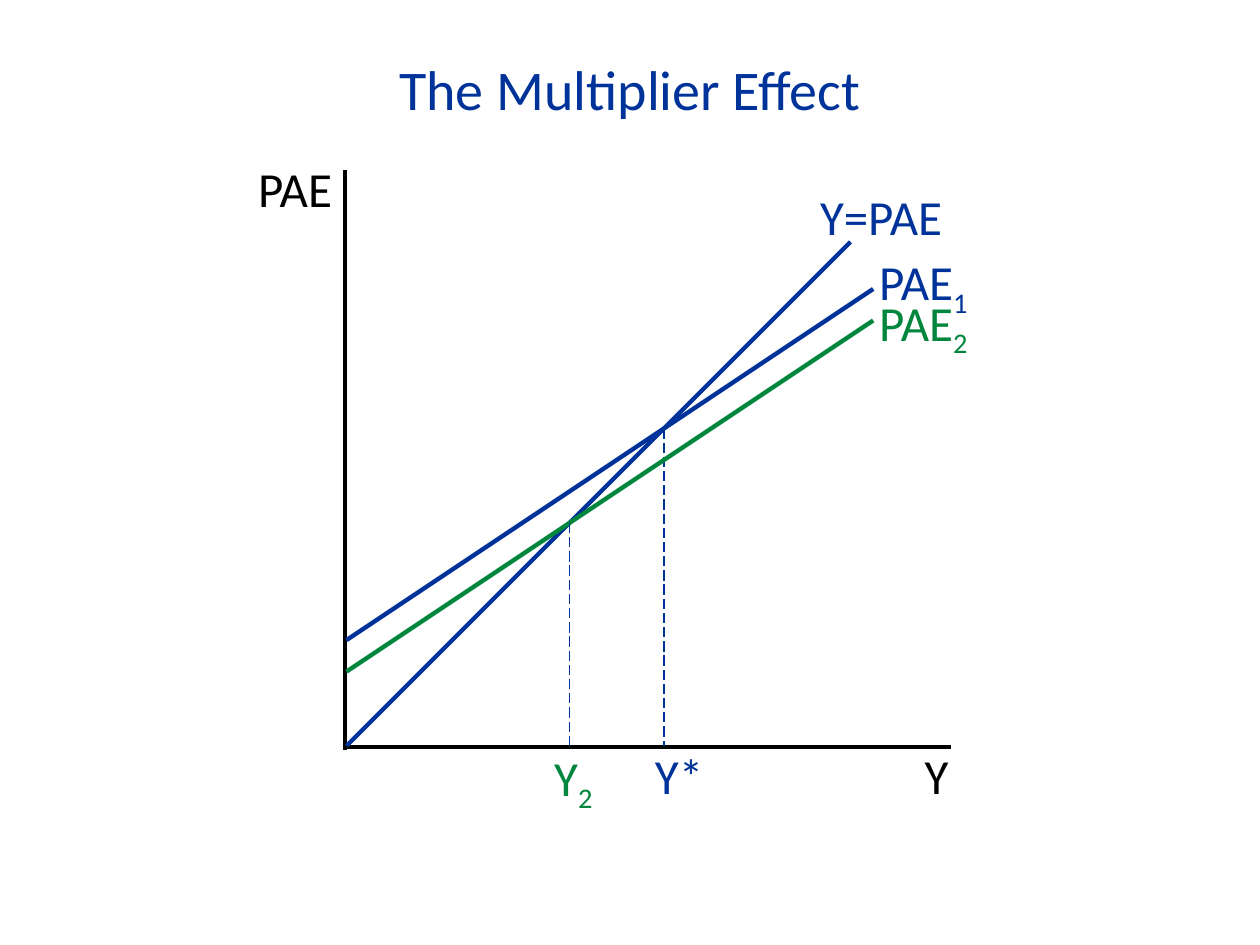
from dataclasses import dataclass

from lxml import etree
from pptx import Presentation
from pptx.dml.color import RGBColor
from pptx.enum.dml import MSO_LINE
from pptx.enum.shapes import MSO_CONNECTOR
from pptx.enum.text import MSO_ANCHOR, PP_ALIGN
from pptx.oxml.ns import qn
from pptx.util import Inches, Pt

STRAIGHT = MSO_CONNECTOR.STRAIGHT
LONG_DASH = MSO_LINE.LONG_DASH
MIDDLE = MSO_ANCHOR.MIDDLE
CENTER = PP_ALIGN.CENTER

BLUE, GREEN, BLACK = "003399", "00863D", "000000"
FONT = "Calibri"
COLUMNS, ROWS = 10, 7.5
CELL = Inches(1)

# Diagram model, in grid cells from the origin
ORIGIN_X, ORIGIN_Y = 2.75, 5.92
SLOPE = 2 / 3
INCOME_END = 4.18
IDENTITY_END = 4


@dataclass
class Expenditure:
    intercept: float
    color: str

    def at(self, income: float) -> float:
        return self.intercept + SLOPE * income

    @property
    def equilibrium(self) -> float:
        return self.intercept / (1 - SLOPE)


@dataclass
class Label:
    text: str
    left: float
    top: float
    width: float
    color: str
    subscript: str = ""
    height: float = 0.57
    spacing: float = 1.0


LABELS = [
    Label("Y", 7.24, 5.87, 0.49, BLACK),
    Label("PAE", 1.95, 1.3, 0.82, BLACK, height=0.49, spacing=0.8),
    Label("Y=PAE", 6.41, 1.43, 1.25, BLUE),
    Label("PAE", 6.88, 1.95, 0.96, BLUE, "1"),
    Label("PAE", 6.88, 2.27, 0.96, GREEN, "2"),
    Label("Y*", 5.1, 5.87, 0.66, BLUE),
    Label("Y", 4.3, 5.88, 0.66, GREEN, "2"),
]


def cells(count: float) -> int:
    return round(count * CELL)


def rgb(color: str) -> RGBColor:
    return RGBColor.from_string(color)


def format_run(run, size: float, color: str) -> None:
    run.font.name = FONT
    run.font.size = Pt(size)
    run.font.color.rgb = rgb(color)


def draw_line(slide, start: tuple[float, float], end: tuple[float, float],
              color: str, width: float = 2.5, dash=None) -> None:
    """Join two (income, expenditure) points."""
    (x1, y1), (x2, y2) = start, end
    line = slide.shapes.add_connector(
        STRAIGHT, cells(ORIGIN_X + x1), cells(ORIGIN_Y - y1),
        cells(ORIGIN_X + x2), cells(ORIGIN_Y - y2))
    line.line.color.rgb = rgb(color)
    line.line.width = Pt(width)
    if dash is not None:
        line.line.dash_style = dash
    etree.SubElement(line._element.spPr, qn("a:effectLst"))


def draw_label(slide, label: Label) -> None:
    box = slide.shapes.add_textbox(cells(label.left), cells(label.top),
                                   cells(label.width), cells(label.height))
    box.text_frame.word_wrap = True
    paragraph = box.text_frame.paragraphs[0]
    paragraph.text = label.text
    paragraph.line_spacing = label.spacing
    if label.subscript:
        subscript = paragraph.add_run()
        subscript.text = label.subscript
        subscript.font._element.set("baseline", "-25000")
    for run in paragraph.runs:
        format_run(run, 28, label.color)


def draw_title(slide, text: str) -> None:
    title = slide.shapes.title
    title.left, title.top = cells(0.7), cells(0.38)
    title.width, title.height = cells(8.6), cells(0.64)
    title.text_frame.text = text
    title.text_frame.vertical_anchor = MIDDLE
    paragraph = title.text_frame.paragraphs[0]
    paragraph.alignment = CENTER
    format_run(paragraph.runs[0], 32, BLUE)


def main() -> None:
    prs = Presentation()
    prs.slide_width, prs.slide_height = cells(COLUMNS), cells(ROWS)
    slide = prs.slides.add_slide(prs.slide_layouts[5])
    draw_title(slide, "The Multiplier Effect")

    # Axes
    draw_line(slide, (-0.01, 4.57), (-0.01, -0.03), BLACK)
    draw_line(slide, (0, -0.01), (4.8, -0.01), BLACK)

    # Income equals expenditure
    draw_line(slide, (0, 0), (IDENTITY_END, IDENTITY_END), BLUE)

    # Expenditure lines, each dropped to the axis at its equilibrium
    for curve in (Expenditure(0.84, BLUE), Expenditure(0.59, GREEN)):
        draw_line(slide, (0, curve.intercept),
                  (INCOME_END, curve.at(INCOME_END)), curve.color)
        income = curve.equilibrium
        draw_line(slide, (income, income), (income, 0), BLUE, 0.75, LONG_DASH)

    for label in LABELS:
        draw_label(slide, label)

    prs.save("out.pptx")


if __name__ == "__main__":
    main()
